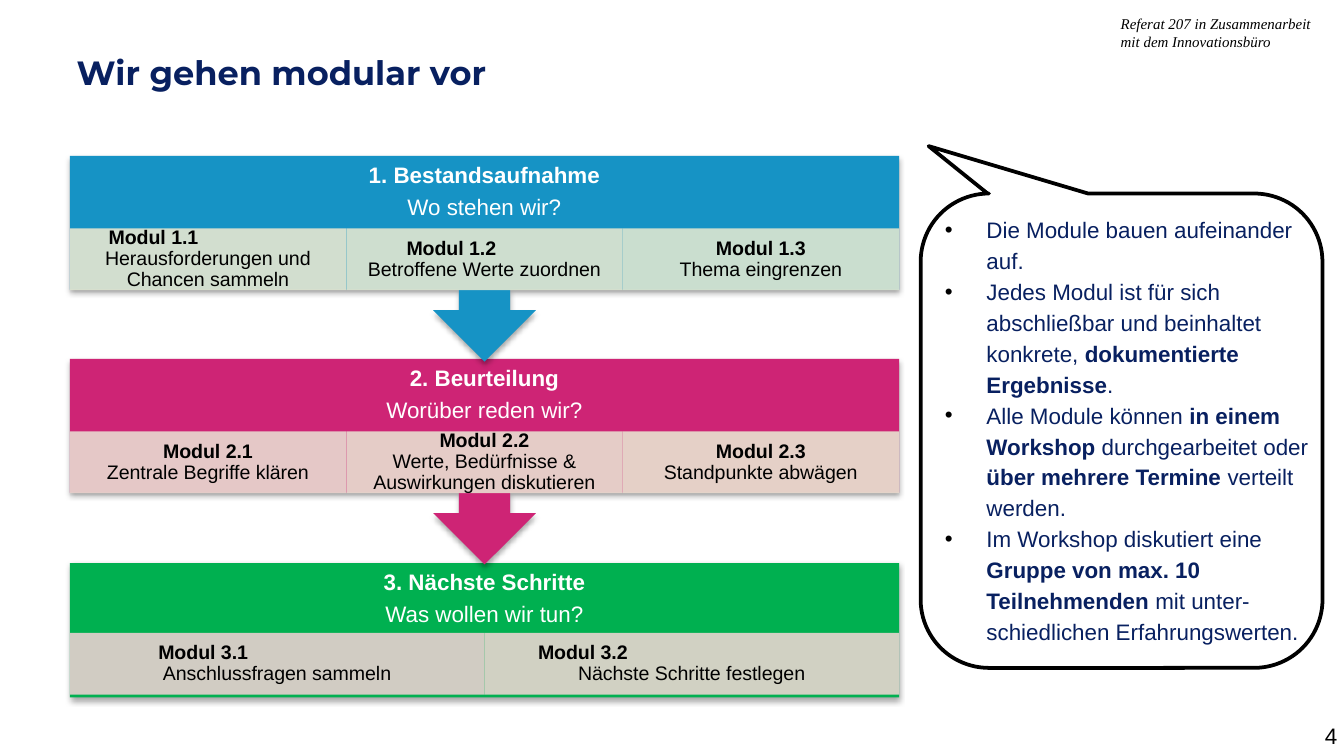
import dataclasses

import lxml.etree
import pptx
import pptx.dml.color
import pptx.enum.shapes
import pptx.enum.text
import pptx.oxml.ns
import pptx.util

Inches = pptx.util.Inches
Pt = pptx.util.Pt
qn = pptx.oxml.ns.qn
Shapes = pptx.enum.shapes.MSO_SHAPE
Align = pptx.enum.text.PP_ALIGN
Anchor = pptx.enum.text.MSO_ANCHOR


@dataclasses.dataclass(frozen=True)
class Theme:
    navy: str = "082060"
    black: str = "000000"
    white: str = "FFFFFF"
    blue: str = "1693C5"
    magenta: str = "CE2475"
    green: str = "00B050"
    sans: str = "Arial"
    serif: str = "Times New Roman"
    display: str = "Montserrat"
    title_size: float = 18
    body_size: float = 12
    module_size: float = 10.5
    note_size: float = 8


def rgb(color):
    return pptx.dml.color.RGBColor.from_string(color)


def add_xml(parent, tag, **attributes):
    return lxml.etree.SubElement(parent, qn(tag), {name: str(value) for name, value in attributes.items()})


def write_text(text_frame, text, *, font, size, color, bold=False, italic=False,
               align=Align.LEFT, spacing=None, after=0, indent=0, hanging=0, level=0, bullet=None):
    paragraph = text_frame.paragraphs[0]
    if paragraph.runs:
        paragraph = text_frame.add_paragraph()
    paragraph.alignment = align
    paragraph.level = level
    paragraph.line_spacing = spacing
    paragraph.space_before = Pt(0)
    paragraph.space_after = Pt(after)
    properties = paragraph._p.get_or_add_pPr()
    properties.set("marL", str(Inches(indent)))
    properties.set("indent", str(Inches(-hanging)))
    if bullet:
        add_xml(add_xml(properties, "a:buClr"), "a:srgbClr", val=Theme.black)
        add_xml(properties, "a:buFont", typeface=font)
        add_xml(properties, "a:buChar", char=bullet)
    for index, part in enumerate(text.split("**")):
        if part:
            run = paragraph.add_run()
            run.text = part
            run.font.name = font
            run.font.size = Pt(size)
            run.font.color.rgb = rgb(color)
            run.font.bold = bold or index % 2 == 1
            run.font.italic = italic


class SlideBuilder:
    def __init__(self, slide, theme):
        self.slide = slide
        self.theme = theme

    def prepare_frame(self, text_frame, anchor, inset):
        text_frame.word_wrap = True
        text_frame.auto_size = pptx.enum.text.MSO_AUTO_SIZE.NONE
        text_frame.vertical_anchor = anchor
        text_frame.margin_left = text_frame.margin_right = Inches(inset)
        text_frame.margin_top = text_frame.margin_bottom = Inches(0.05)
        return text_frame

    def placeholder(self, index, left, top, width, height, inset=0.1):
        shape = self.slide.placeholders[index]
        shape.left, shape.top = Inches(left), Inches(top)
        shape.width, shape.height = Inches(width), Inches(height)
        shape.element.getparent().append(shape.element)
        return self.prepare_frame(shape.text_frame, Anchor.TOP, inset)

    def text_box(self, left, top, width, height, inset=0.1):
        box = self.slide.shapes.add_textbox(Inches(left), Inches(top), Inches(width), Inches(height))
        return self.prepare_frame(box.text_frame, Anchor.MIDDLE, inset)

    def shape(self, kind, left, top, width, height, fill, line=None, alpha=None, shadow=False):
        shape = self.slide.shapes.add_shape(kind, Inches(left), Inches(top), Inches(width), Inches(height))
        shape.shadow.inherit = False
        shape.fill.solid()
        shape.fill.fore_color.rgb = rgb(fill)
        if line:
            shape.line.color.rgb = rgb(line)
            shape.line.width = Pt(2)
        else:
            shape.line.fill.background()
        properties = shape.element.spPr
        if alpha:
            add_xml(properties.find(qn("a:solidFill"))[0], "a:alpha", val=alpha * 1000)
        if shadow:
            outer = add_xml(properties.find(qn("a:effectLst")), "a:outerShdw",
                            blurRad=Pt(3), dist=Pt(1.8), dir=90 * 60000, rotWithShape=0)
            add_xml(add_xml(outer, "a:srgbClr", val=self.theme.black), "a:alpha", val=35000)
        return shape

    def module(self, left, top, width, fill, heading, detail, indent):
        shape = self.shape(Shapes.RECTANGLE, left, top, width, 0.46, fill, alpha=90)
        frame = self.prepare_frame(shape.text_frame, Anchor.MIDDLE, 0.1)
        style = dict(font=self.theme.sans, size=self.theme.module_size, color=self.theme.black, spacing=0.9)
        write_text(frame, heading, bold=True, align=Align.LEFT if indent else Align.CENTER,
                   indent=indent, **style)
        write_text(frame, detail, align=Align.CENTER, **style)

    def stage(self, top, color, heading, question, modules, arrow=True):
        left, width = 0.52, 6.17
        kind, height = (Shapes.UP_ARROW_CALLOUT, 1.53) if arrow else (Shapes.RECTANGLE, 1)
        band = self.shape(kind, left, top, width, height, color, shadow=True)
        band.rotation = 180 if arrow else 0
        frame = self.text_box(left, top, width, 0.54)
        style = dict(font=self.theme.sans, size=self.theme.body_size, color=self.theme.white,
                     align=Align.CENTER, spacing=0.9)
        write_text(frame, heading, bold=True, after=4.2, **style)
        write_text(frame, question, **style)
        module_width = width / len(modules)
        for index, module in enumerate(modules):
            self.module(left + index * module_width, top + (0.54 if arrow else 0.52), module_width, *module)


def main():
    theme = Theme()
    presentation = pptx.Presentation()
    presentation.slide_width = Inches(10)
    presentation.slide_height = presentation.slide_width * 9 // 16
    builder = SlideBuilder(presentation.slides.add_slide(presentation.slide_layouts[1]), theme)

    callout = builder.shape(Shapes.ROUNDED_RECTANGULAR_CALLOUT, 6.85, 1.44, 2.99, 3.53,
                            theme.white, line=theme.black)
    for index, value in enumerate((-0.48, -0.6, 0.17)):
        callout.adjustments[index] = value

    note = builder.shape(Shapes.RECTANGLE, 8.24, 0.06, 1.68, 0.37, theme.white, line=theme.white)
    note_frame = builder.prepare_frame(note.text_frame, Anchor.MIDDLE, 0.1)
    for line in ("Referat 207 in Zusammenarbeit", "mit dem Innovationsbüro"):
        write_text(note_frame, line, font=theme.serif, size=theme.note_size, color=theme.black, italic=True)

    builder.stage(4.19, theme.green, "3. Nächste Schritte", "Was wollen wir tun?", [
        ("E8D0D0", "Modul 3.1", "Anschlussfragen sammeln", 0.56),
        ("E8D5D0", "Modul 3.2", "Nächste Schritte festlegen", 0.3),
    ], arrow=False)
    builder.stage(2.67, theme.magenta, "2. Beurteilung", "Worüber reden wir?", [
        ("E8DAD0", "Modul 2.1", "Zentrale Begriffe klären", 0),
        ("E8DFD1", "Modul 2.2", "Werte, Bedürfnisse & Auswirkungen diskutieren", 0),
        ("E8E3D1", "Modul 2.3", "Standpunkte abwägen", 0),
    ])
    builder.stage(1.16, theme.blue, "1. Bestandsaufnahme", "Wo stehen wir?", [
        ("E7E7D1", "Modul 1.1", "Herausforderungen und Chancen sammeln", 0.19),
        ("E3E7D1", "Modul 1.2", "Betroffene Werte zuordnen", 0.35),
        ("DEE7D1", "Modul 1.3", "Thema eingrenzen", 0),
    ])

    body = builder.placeholder(1, 6.43, 1.53, 3.41, 3.31)
    for text in (
        "Die Module bauen aufeinander auf.",
        "Jedes Modul ist für sich abschließbar und beinhaltet konkrete, **dokumentierte Ergebnisse**.",
        "Alle Module können **in einem Workshop** durchgearbeitet oder "
        "**über mehrere Termine **verteilt werden.",
        "Im Workshop diskutiert eine **Gruppe von max. 10 Teilnehmenden **"
        "mit unter-schiedlichen Erfahrungswerten.",
    ):
        write_text(body, text, font=theme.sans, size=theme.body_size, color=theme.navy,
                   spacing=1.15, indent=0.81, hanging=0.31, level=1, bullet="•")

    title = builder.placeholder(0, 0.52, 0.29, 7.67, 0.44, inset=0.05)
    write_text(title, "Wir gehen modular vor", font=theme.display, size=theme.title_size,
               color=theme.navy, bold=True, spacing=1.15)
    number = builder.text_box(7.67, 5.32, 2.33, 0.31, inset=0.05)
    write_text(number, "4", font=theme.sans, size=theme.body_size, color=theme.black, align=Align.RIGHT)

    presentation.save("out.pptx")


if __name__ == "__main__":
    main()
